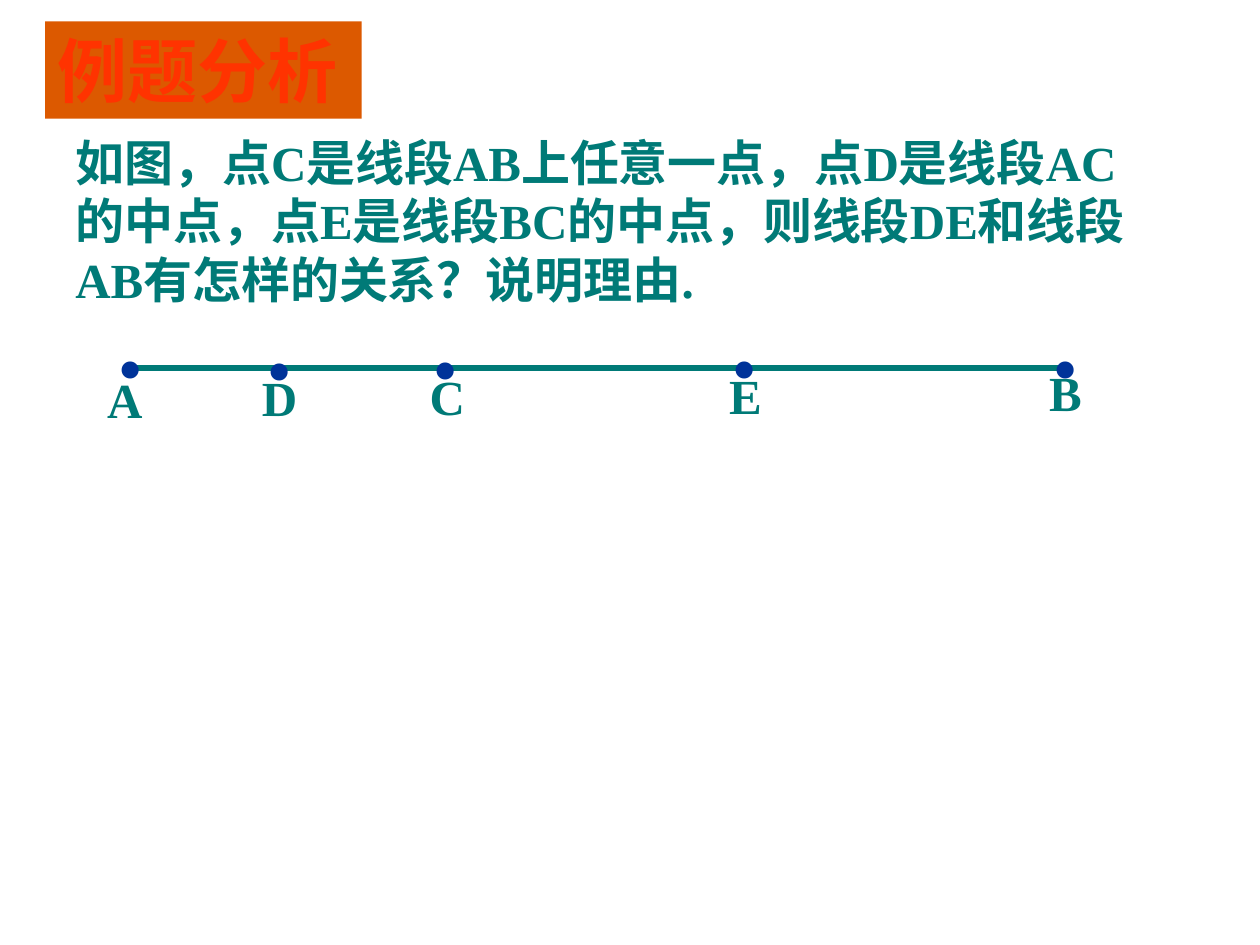
import pptx
import pptx.util
import pptx.dml.color
import pptx.enum.shapes
import pptx.enum.text
import lxml.etree
from dataclasses import dataclass

Cm = pptx.util.Cm
Pt = pptx.util.Pt
RGB = pptx.dml.color.RGBColor.from_string


@dataclass
class Theme:
    font: str = "Times New Roman"
    band: str = "DC5900"
    head: str = "FF3300"
    ink: str = "007A77"
    dot: str = "003399"
    head_size: int = 40
    text_size: int = 28
    dot_size: int = 60


theme = Theme()


def write(shape, text, size, color):
    frame = shape.text_frame
    frame.text = text
    frame.word_wrap = True
    frame.auto_size = pptx.enum.text.MSO_AUTO_SIZE.NONE
    frame.vertical_anchor = pptx.enum.text.MSO_ANCHOR.TOP
    para = frame.paragraphs[0]
    para.alignment = pptx.enum.text.PP_ALIGN.LEFT
    para.font.name = theme.font
    para.font.size = Pt(size)
    para.font.bold = True
    para.font.color.rgb = RGB(color)


deck = pptx.Presentation()
deck.slide_width = Cm(25.4)
deck.slide_height = Cm(19.05)
slide = deck.slides.add_slide(deck.slide_layouts[5])
shapes = slide.shapes

# Heading
title = shapes.title
title.left, title.top = Cm(0.91), Cm(0.43)
title.width, title.height = Cm(6.38), Cm(1.96)
title.fill.solid()
title.fill.fore_color.rgb = RGB(theme.band)
write(title, "例题分析", theme.head_size, theme.head)

# Question
task = shapes.add_textbox(Cm(1.27), Cm(2.54), Cm(22.23), Cm(3.81))
write(
    task,
    "如图，点C是线段AB上任意一点，点D是线段AC的中点，"
    "点E是线段BC的中点，则线段DE和线段AB有怎样的关系？说明理由.",
    theme.text_size,
    theme.ink,
)

# Segment AB
line = shapes.add_connector(
    pptx.enum.shapes.MSO_CONNECTOR.STRAIGHT, Cm(2.54), Cm(7.42), Cm(21.39), Cm(7.42)
)
line.line.color.rgb = RGB(theme.ink)
line.line.width = Pt(3)
lxml.etree.SubElement(line._element.spPr, pptx.oxml.ns.qn("a:effectLst"))

# Points: name, dot left and top, label left and top
points = [
    ("A", 2.11, 5.36, 1.91, 7.32),
    ("D", 5.13, 5.41, 5.03, 7.29),
    ("C", 8.46, 5.38, 8.41, 7.26),
    ("E", 14.5, 5.36, 14.45, 7.24),
    ("B", 20.96, 5.36, 20.9, 7.19),
]
for name, dot_x, dot_y, x, y in points:
    dot = shapes.add_textbox(Cm(dot_x), Cm(dot_y), Cm(0.64), Cm(2.79))
    write(dot, ".", theme.dot_size, theme.dot)
    label = shapes.add_textbox(Cm(x), Cm(y), Cm(1.47), Cm(1.45))
    write(label, name, theme.text_size, theme.ink)

deck.save("out.pptx")
